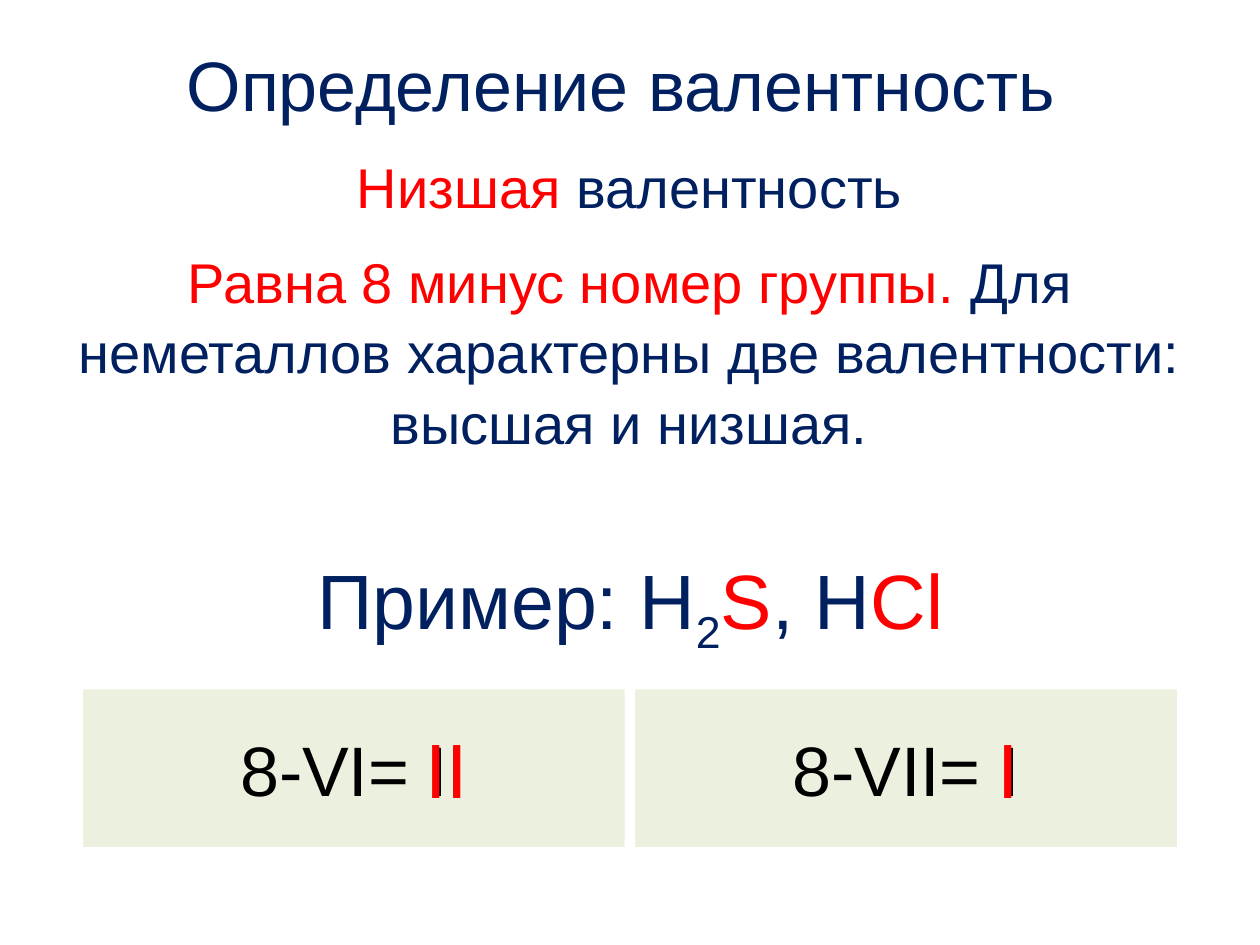
from dataclasses import dataclass

from pptx import Presentation
from pptx.dml.color import RGBColor
from pptx.enum.shapes import MSO_SHAPE
from pptx.enum.text import MSO_ANCHOR, MSO_AUTO_SIZE, PP_ALIGN
from pptx.util import Pt


@dataclass(frozen=True)
class Theme:
    font: str = "Arial"
    navy: str = "002060"
    red: str = "FF0000"
    black: str = "000000"
    card: str = "EBF1DE"
    body: int = 32
    title: int = 40
    example: int = 44


def write(sp, runs, size, font, line_spacing=None):
    """Fill a shape with one centred paragraph; runs are (text, colour[, baseline])."""
    tf = sp.text_frame
    tf.word_wrap = True
    tf.auto_size = MSO_AUTO_SIZE.NONE
    tf.vertical_anchor = MSO_ANCHOR.MIDDLE
    p = tf.paragraphs[0]
    p.alignment = PP_ALIGN.CENTER
    p.space_before = Pt(0)
    if line_spacing:
        p.line_spacing = line_spacing
    for text, color, *baseline in runs:
        r = p.add_run()
        r.text = text
        r.font.name = font
        r.font.size = Pt(size)
        r.font.color.rgb = RGBColor.from_string(color)
        if baseline:
            r.font._element.set("baseline", str(baseline[0]))
    return p


class SlideBuilder:
    def __init__(self, slide, theme):
        self.s = slide
        self.theme = theme

    def placeholder(self, idx, box, runs, size, **fmt):
        sp = self.s.placeholders[idx]
        sp.left, sp.top, sp.width, sp.height = map(Pt, box)
        return write(sp, runs, size, self.theme.font, **fmt)

    def title(self, box, runs):
        self.placeholder(0, box, runs, self.theme.title)

    def body(self, box, runs):
        p = self.placeholder(1, box, runs, self.theme.body, line_spacing=1.05)
        pPr = p._p.get_or_add_pPr()
        pPr.set("marL", "0")
        pPr.set("indent", "0")
        bullet = pPr.makeelement(
            "{http://schemas.openxmlformats.org/drawingml/2006/main}buNone", {})
        pPr.append(bullet)

    def text(self, box, runs, size):
        write(self.s.shapes.add_textbox(*map(Pt, box)), runs, size, self.theme.font)

    def card(self, box, text):
        sp = self.s.shapes.add_shape(MSO_SHAPE.RECTANGLE, *map(Pt, box))
        sp.shadow.inherit = False
        sp.fill.solid()
        sp.fill.fore_color.rgb = RGBColor.from_string(self.theme.card)
        sp.line.fill.background()
        write(sp, [(text, self.theme.black)], self.theme.title, self.theme.font)


def main():
    prs = Presentation()
    prs.slide_width, prs.slide_height = Pt(720), Pt(540)
    t = Theme()
    b = SlideBuilder(prs.slides.add_slide(prs.slide_layouts[1]), t)

    b.title((70.5, 16.5, 579.5, 62), [("Определение валентность ", t.navy)])
    b.text((19.5, 78.5, 680.5, 56),
           [("Низшая", t.red), (" валентность", t.navy)], t.body)
    b.body((19.5, 129.5, 680.5, 140.5),
           [("Равна 8 минус номер группы. ", t.red),
            ("Для неметаллов характерны две валентности: высшая и низшая.", t.navy)])
    b.text((41, 292.5, 638.5, 106.5),
           [("Пример: H", t.navy), ("2", t.navy, -25000), ("S", t.red),
            (", H", t.navy), ("Cl", t.red)], t.example)

    card_left, card_width, card_gap = 47.5, 309.5, 6
    calculations = [("8-VI= II", "II", 219.5), ("8-VII= I", "I", 540)]
    for i, (calculation, valence, valence_left) in enumerate(calculations):
        left = card_left + i * (card_width + card_gap)
        b.card((left, 394, card_width, 90), calculation)
        b.text((valence_left, 402.5, 72, 72), [(valence, t.red)], t.example)

    prs.save("out.pptx")


if __name__ == "__main__":
    main()
